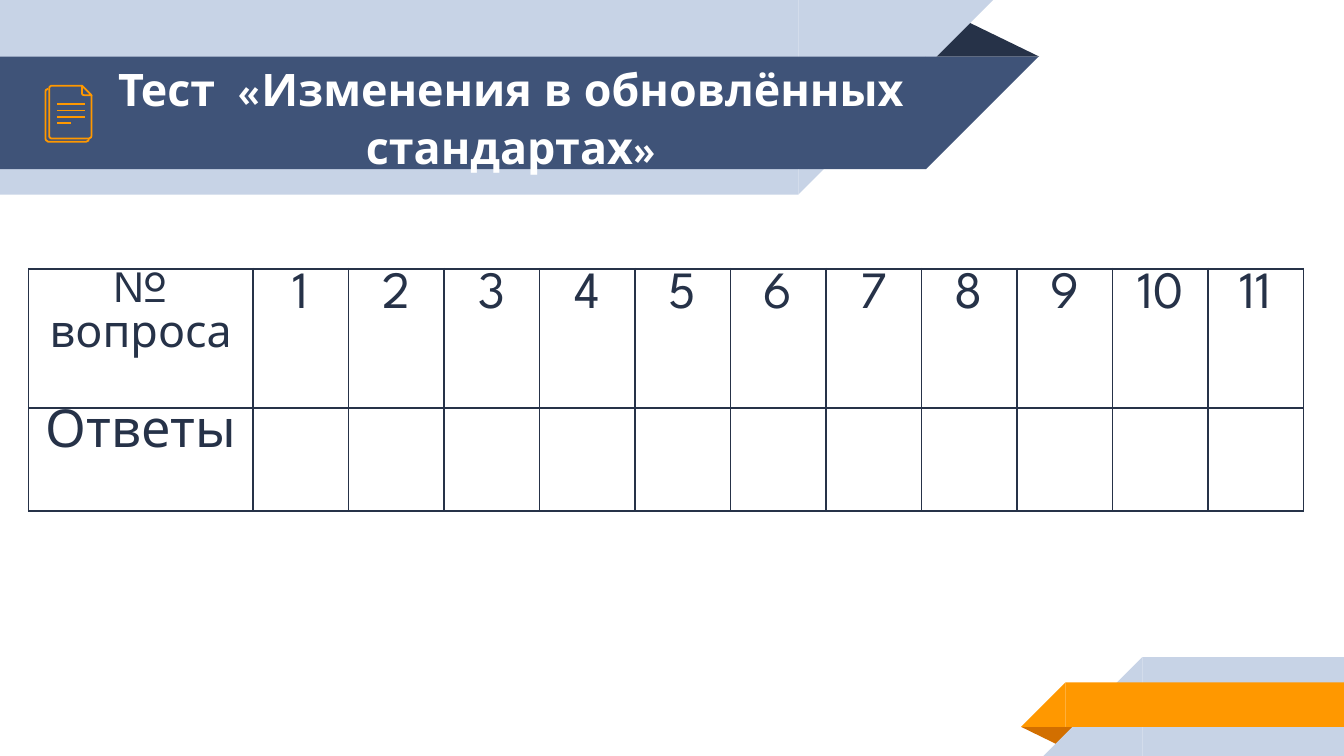
from dataclasses import dataclass
from typing import Any

from lxml.etree import SubElement
from pptx import Presentation
from pptx.dml.color import RGBColor
from pptx.enum.shapes import MSO_CONNECTOR, MSO_SHAPE
from pptx.enum.text import MSO_ANCHOR, PP_ALIGN
from pptx.oxml.ns import qn
from pptx.util import Cm, Pt


@dataclass(frozen=True)
class Theme:
    pale: str = "C7D3E6"
    blue: str = "3F5378"
    navy: str = "263248"
    orange: str = "FF9800"
    rust: str = "D26F00"
    white: str = "FFFFFF"
    font: str = "League Spartan"
    label_size: int = 24
    number_size: int = 28
    icon_line: float = 0.96
    border: int = 1


@dataclass(frozen=True)
class Band:
    """A bar with a slanted end, as wide as the bar is high."""
    x: float
    y: float
    w: float
    h: float
    color: str
    points_right: bool


@dataclass(frozen=True)
class Fold:
    """The dark triangle behind a ribbon."""
    x: float
    y: float
    w: float
    h: float
    color: str
    rotation: int


@dataclass(frozen=True)
class Outline:
    points: tuple[tuple[float, float], ...]
    closed: bool = False


T = Theme()
WIDTH, HEIGHT = 25.4, 14.29

RIBBONS = (
    Fold(17.48, 0.36, 2.16, 0.71, T.navy, 0),
    Band(0, 0, 15.09, 3.68, T.pale, True),
    Band(0, 1.07, 17.5, 2.13, T.blue, True),
    Fold(19.3, 13.74, 1.09, 0.36, T.rust, 180),
    Band(21.59, 12.42, WIDTH - 21.59, HEIGHT - 12.42, T.pale, False),
    Band(20.14, 12.9, WIDTH - 20.14, 0.84, T.orange, False),
)

ICON = (
    # Back page, front page, turned corner
    Outline(((1.68, 2.62), (1.67, 2.66), (1.63, 2.68), (0.91, 2.68), (0.87, 2.65),
             (0.86, 2.62), (0.86, 1.73), (0.87, 1.7), (0.91, 1.68))),
    Outline(((1.73, 1.8), (1.73, 2.57), (1.72, 2.6), (1.68, 2.62), (0.97, 2.62),
             (0.94, 2.6), (0.93, 2.57), (0.93, 1.67), (0.94, 1.64), (0.97, 1.62),
             (1.55, 1.62))),
    Outline(((1.55, 1.77), (1.55, 1.62), (1.73, 1.8), (1.59, 1.8), (1.56, 1.79)), True),
)
ICON_LINE_ENDS = (1.6, 1.6, 1.6, 1.35)


def set_all(obj: Any, values: dict[str, Any]) -> None:
    for name, value in values.items():
        setattr(obj, name, value)


def paint(sp: Any, color: str) -> None:
    sp.shadow.inherit = False
    sp.fill.solid()
    sp.fill.fore_color.rgb = RGBColor.from_string(color)
    sp.line.fill.background()


def stroke(sp: Any) -> None:
    sp.line.color.rgb = RGBColor.from_string(T.orange)
    sp.line.width = Pt(T.icon_line)


def draw_fold(shapes: Any, fold: Fold) -> None:
    sp = shapes.add_shape(MSO_SHAPE.ISOSCELES_TRIANGLE,
                          Cm(fold.x), Cm(fold.y), Cm(fold.w), Cm(fold.h))
    sp.adjustments[0] = 0.324
    sp.rotation = fold.rotation
    paint(sp, fold.color)


def draw_band(shapes: Any, band: Band) -> None:
    bar = shapes.add_shape(MSO_SHAPE.RECTANGLE,
                           Cm(band.x), Cm(band.y), Cm(band.w), Cm(band.h))
    tip_x = band.x + band.w if band.points_right else band.x - band.h
    tip = shapes.add_shape(MSO_SHAPE.RIGHT_TRIANGLE,
                           Cm(tip_x), Cm(band.y), Cm(band.h), Cm(band.h))
    tip.element.spPr.xfrm.set("flipV" if band.points_right else "flipH", "1")
    for sp in (bar, tip):
        paint(sp, band.color)


def draw_outline(shapes: Any, outline: Outline) -> None:
    start, *rest = [(Cm(x), Cm(y)) for x, y in outline.points]
    builder = shapes.build_freeform(*start)
    builder.add_line_segments(rest, close=outline.closed)
    sp = builder.convert_to_shape()
    sp.shadow.inherit = False
    sp.fill.background()
    stroke(sp)


def draw_icon_lines(shapes: Any) -> None:
    for i, end in enumerate(ICON_LINE_ENDS):
        y = Cm(1.97 + 0.12 * i)
        sp = shapes.add_connector(MSO_CONNECTOR.STRAIGHT, Cm(end), y, Cm(1.07), y)
        stroke(sp)
        SubElement(sp.element.spPr, qn("a:effectLst"))


def write(tf: Any, text: str, size: int, color: str, bold: bool = False) -> None:
    p = tf.paragraphs[0]
    set_all(p, {"alignment": PP_ALIGN.CENTER, "line_spacing": 1.07, "space_after": Pt(8)})
    r = p.add_run()
    r.text = text
    set_all(r.font, {"name": T.font, "size": Pt(size), "bold": bold})
    r.font.color.rgb = RGBColor.from_string(color)


def draw_title(shapes: Any, text: str) -> None:
    tf = shapes.add_textbox(Cm(1.73), Cm(1.12), Cm(15.85), Cm(2.13)).text_frame
    margins = {f"margin_{side}": Cm(0.25) for side in ("left", "top", "right", "bottom")}
    set_all(tf, {"word_wrap": True, "vertical_anchor": MSO_ANCHOR.MIDDLE, **margins})
    write(tf, text, T.label_size, T.white, bold=True)


def add_borders(cell: Any) -> None:
    tcPr = cell._tc.get_or_add_tcPr()
    for i, side in enumerate(("a:lnL", "a:lnR", "a:lnT", "a:lnB")):
        ln = tcPr.makeelement(qn(side), {"w": str(Pt(T.border))})
        SubElement(SubElement(ln, qn("a:solidFill")), qn("a:srgbClr"), val=T.navy)
        tcPr.insert(i, ln)


def draw_answer_table(shapes: Any, questions: int) -> None:
    width, label_width = 24.1, 4.24
    table = shapes.add_table(2, questions + 1, Cm(0.54), Cm(5.08),
                             Cm(width), Cm(4.58)).table
    set_all(table, {"first_row": False, "horz_banding": False})
    for i, column in enumerate(table.columns):
        column.width = Cm((width - label_width) / questions if i else label_width)
    for row, height in zip(table.rows, (2.63, 1.95)):
        row.height = Cm(height)
    for cell in table.iter_cells():
        set_all(cell, {"margin_left": Cm(0.18), "margin_right": Cm(0.18),
                       "margin_top": 0, "margin_bottom": 0})
        cell.fill.background()
        add_borders(cell)
    write(table.cell(0, 0).text_frame, "№ вопроса", T.label_size, T.navy)
    write(table.cell(1, 0).text_frame, "Ответы", T.number_size, T.navy)
    for n in range(1, questions + 1):
        write(table.cell(0, n).text_frame, str(n), T.number_size, T.navy)


def main() -> None:
    prs = Presentation()
    set_all(prs, {"slide_width": Cm(WIDTH), "slide_height": Cm(HEIGHT)})
    s = prs.slides.add_slide(prs.slide_layouts[6])

    # Ribbons at the top and bottom
    for part in RIBBONS:
        if isinstance(part, Fold):
            draw_fold(s.shapes, part)
        else:
            draw_band(s.shapes, part)

    # Title and document icon
    draw_title(s.shapes, "Тест  «Изменения в обновлённых стандартах»")
    for outline in ICON:
        draw_outline(s.shapes, outline)
    draw_icon_lines(s.shapes)

    # Answer sheet
    draw_answer_table(s.shapes, questions=11)
    prs.save("out.pptx")


if __name__ == "__main__":
    main()
